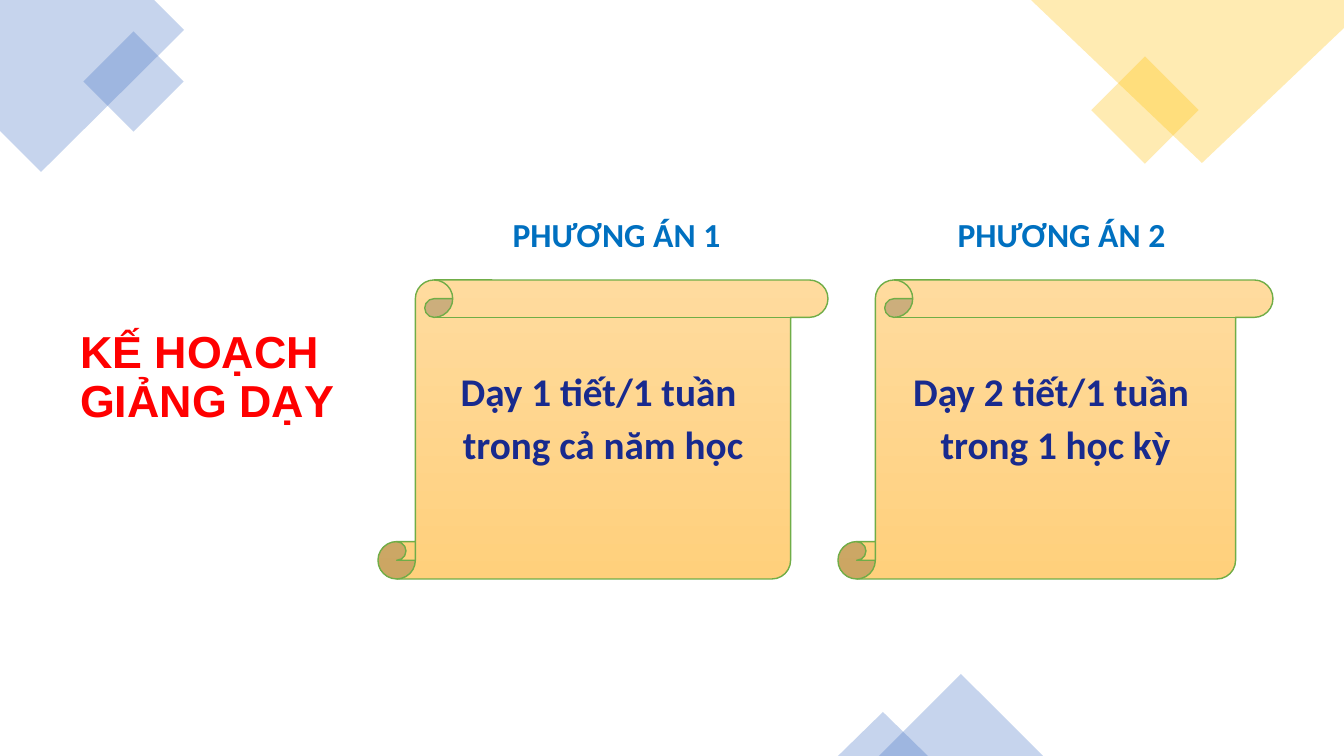
from lxml.etree import SubElement
from pptx import Presentation
from pptx.dml.color import RGBColor
from pptx.enum.shapes import MSO_SHAPE
from pptx.enum.text import MSO_ANCHOR, MSO_AUTO_SIZE, PP_ALIGN
from pptx.oxml.ns import qn
from pptx.util import Emu, Pt

PX = 914400 / 100.8
COLORS = {
    "blue": "4472C4", "gold": "FFC000", "title": "FF0000", "heading": "0070C0",
    "body": "182A8E", "scroll_top": "FFDB9E", "scroll_bottom": "FFD07C", "edge": "70AD47",
}


def px(length):
    """Turn a length in px into EMU."""
    return Emu(round(length * PX))


def rgb(name):
    """Look up a named colour."""
    return RGBColor.from_string(COLORS[name])


def write(frame, lines, *, size, color, font="Calibri", align=PP_ALIGN.CENTER,
          line_spacing=None, space_after=0):
    """Fill a text frame with bold lines in one format."""
    frame.word_wrap = True
    frame.auto_size = MSO_AUTO_SIZE.NONE
    frame.vertical_anchor = MSO_ANCHOR.MIDDLE
    for index, line in enumerate(lines):
        paragraph = frame.add_paragraph() if index else frame.paragraphs[0]
        paragraph.text = line
        paragraph.alignment = align
        paragraph.line_spacing = line_spacing
        paragraph.space_before = Pt(0)
        paragraph.space_after = Pt(space_after)
        paragraph.font.name = font
        paragraph.font.size = Pt(size)
        paragraph.font.bold = True
        paragraph.font.color.rgb = rgb(color)


def tint(ornament, color):
    """Give an ornament a fill of 30% opacity and no outline."""
    ornament.shadow.inherit = False
    ornament.line.fill.background()
    ornament.fill.solid()
    ornament.fill.fore_color.rgb = rgb(color)
    solid = ornament._element.spPr.find(".//" + qn("a:srgbClr"))
    SubElement(solid, qn("a:alpha"), val="30000")


def add_corner(slide, outline, diamond, color):
    """Draw a corner polygon with a small square standing on its tip."""
    builder = slide.shapes.build_freeform(*outline[0], scale=PX)
    builder.add_line_segments(outline[1:], close=True)
    tint(builder.convert_to_shape(), color)
    left, top, side = diamond
    square = slide.shapes.add_shape(
        MSO_SHAPE.RECTANGLE, px(left), px(top), px(side), px(side))
    square.rotation = 315
    tint(square, color)


def add_peaks(slide, bottom, peaks):
    """Stand triangles on the bottom edge."""
    for left, width, height in peaks:
        peak = slide.shapes.add_shape(
            MSO_SHAPE.ISOSCELES_TRIANGLE, px(left), px(bottom - height), px(width), px(height))
        tint(peak, "blue")


def add_title(slide, text, box):
    """Place the slide title at the left."""
    title = slide.shapes.title
    title.left, title.top, title.width, title.height = map(px, box)
    write(title.text_frame, [text], size=32, color="title", font="Arial",
          align=PP_ALIGN.LEFT, line_spacing=0.9)


def add_option(slide, heading, lines, box, heading_indent):
    """Draw a scroll with its heading above."""
    left, top, width, height = box
    label = slide.shapes.add_textbox(
        px(left + heading_indent), px(top - 66), px(241), px(40))
    write(label.text_frame, [heading], size=24, color="heading")

    scroll = slide.shapes.add_shape(MSO_SHAPE.VERTICAL_SCROLL, *map(px, box))
    scroll.shadow.inherit = False
    scroll.fill.gradient()
    scroll.fill.gradient_angle = 270
    for stop, color in zip(scroll.fill.gradient_stops, ("scroll_top", "scroll_bottom")):
        stop.color.rgb = rgb(color)
    scroll.line.color.rgb = rgb("edge")
    scroll.line.width = Pt(1)
    scroll.text_frame.margin_bottom = px(48)
    write(scroll.text_frame, lines, size=28, color="body", space_after=3.9)


def main():
    """Build the teaching plan slide."""
    presentation = Presentation()
    presentation.slide_width, presentation.slide_height = px(1344), px(756)
    slide = presentation.slides.add_slide(presentation.slide_layouts[5])
    add_corner(slide, [(0, 0), (154, 0), (184, 30), (41, 172), (0, 131)],
               (98, 46, 71), "blue")
    add_corner(slide, [(1031, 0), (1344, 0), (1344, 28), (1202, 163)],
               (1107, 72, 76), "gold")
    add_peaks(slide, 756, [(879, 164, 82), (838, 90, 44)])
    add_title(slide, "KẾ HOẠCH GIẢNG DẠY", (70, 124, 406, 509))
    add_option(slide, "PHƯƠNG ÁN 1", ["Dạy 1 tiết/1 tuần ", "trong cả năm học"],
               (378, 280, 450, 299), 118)
    add_option(slide, "PHƯƠNG ÁN 2", ["Dạy 2 tiết/1 tuần ", "trong 1 học kỳ"],
               (838, 280, 435, 299), 103)
    presentation.save("out.pptx")


if __name__ == "__main__":
    main()
